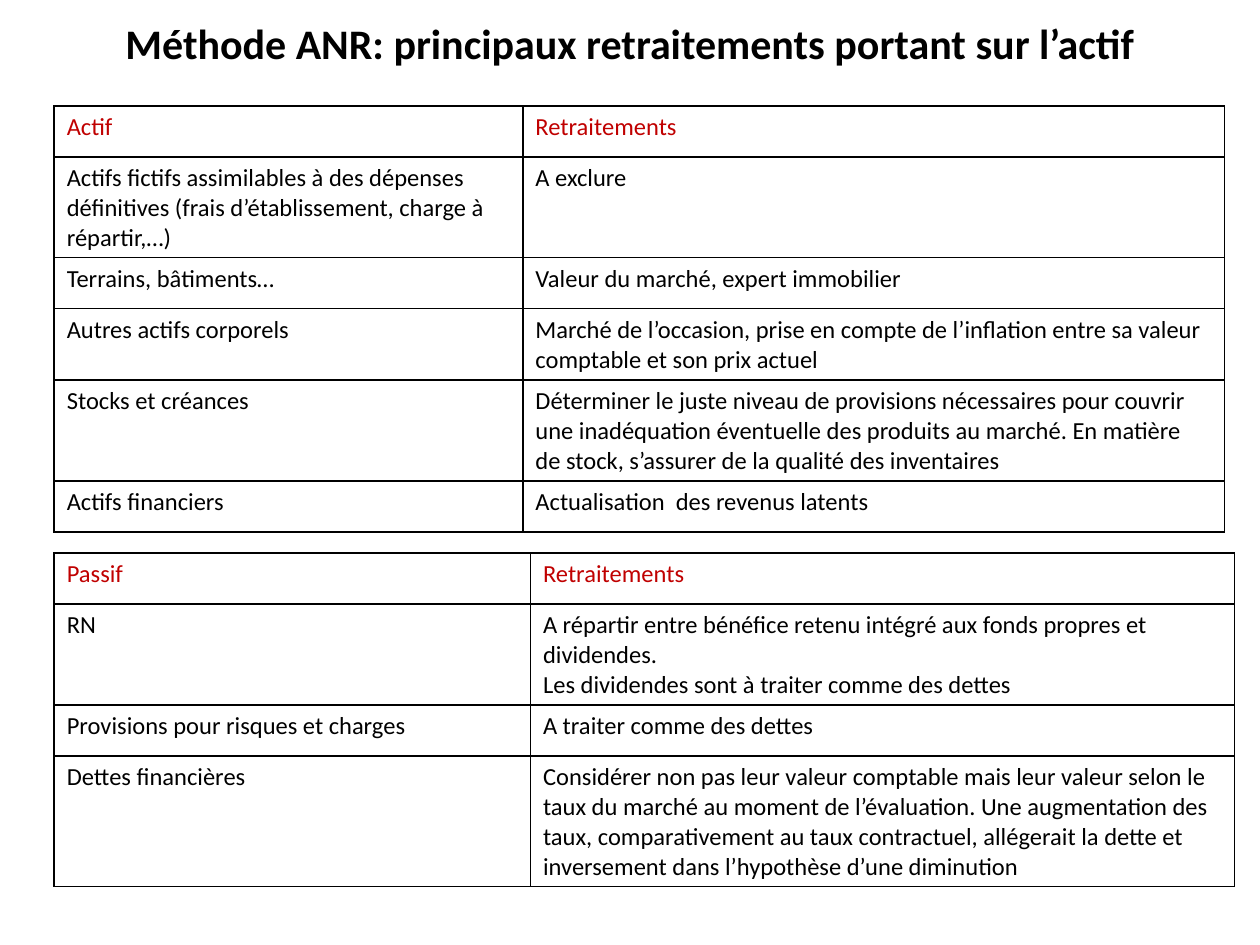
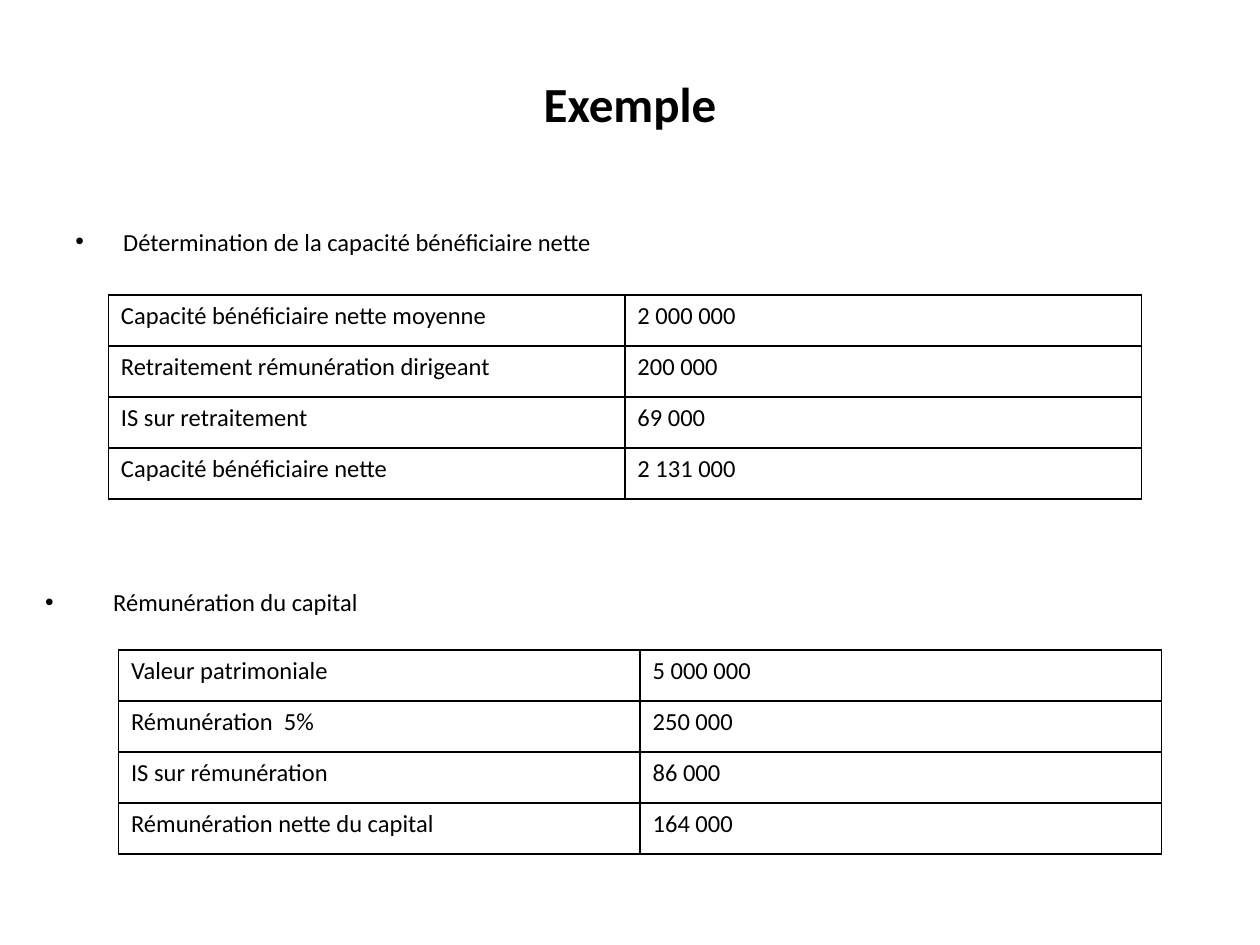
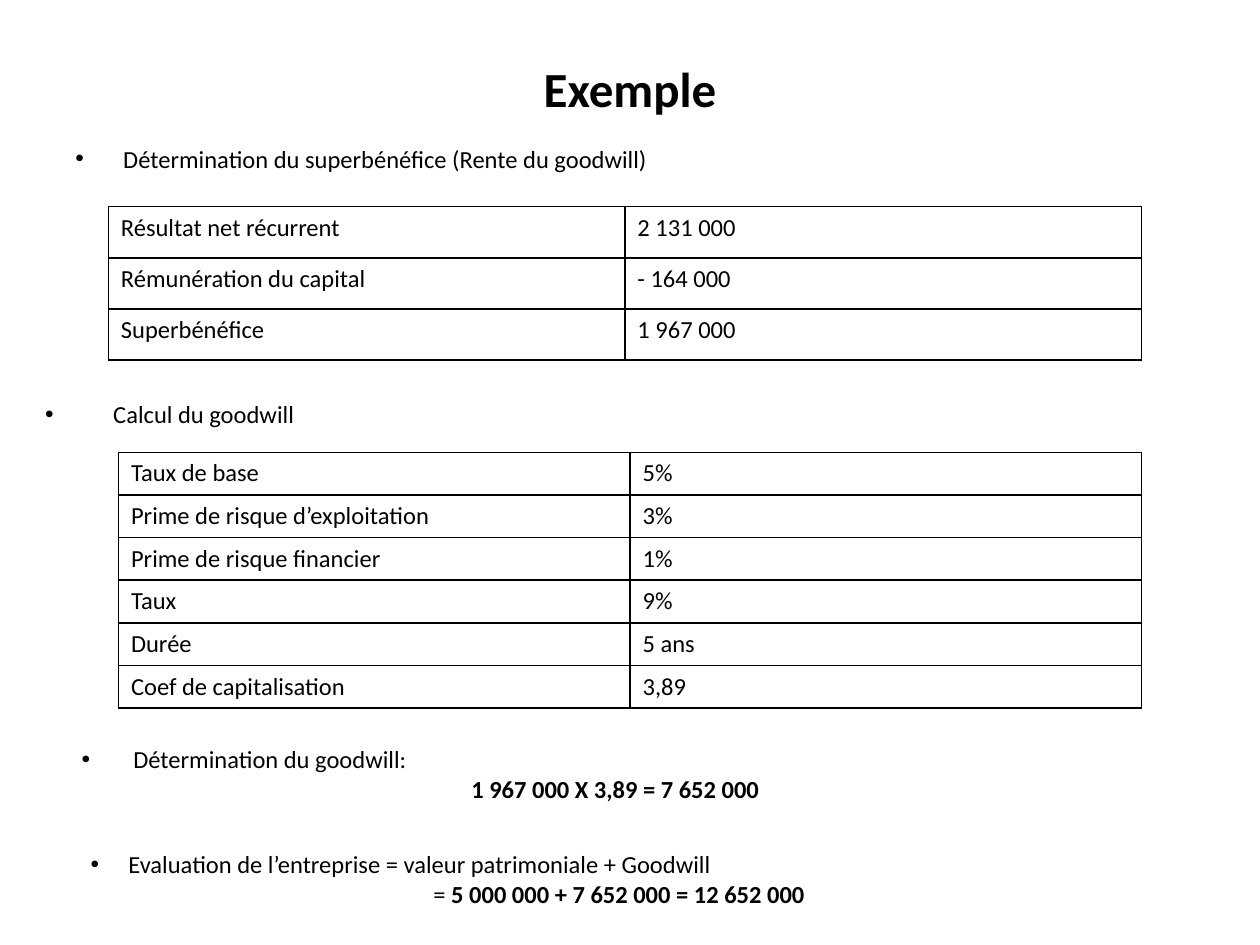
from lxml import etree
from pptx import Presentation
from pptx import util as u
from pptx.dml.color import RGBColor
from pptx.enum import text
from pptx.oxml import parse_xml

COLORS = {"text": "000000", "header": "C00000", "border": "000000"}
BODY = {"name": "Calibri", "size": u.Pt(14), "bold": False}
STRONG = {**BODY, "bold": True}
NS = "http://schemas.openxmlformats.org/drawingml/2006/main"

slides = [
    {
        "title": ("Méthode ANR: principaux retraitements portant sur l’actif", 24, (0.5, 0, 9, 0.68)),
        "bullets": [],
        "tables": [
            (0.43, 0.84, 2.43, (3.72, 5.57), True, [
                ("Actif", "Retraitements"),
                ("Actifs fictifs assimilables à des dépenses définitives "
                 "(frais d’établissement, charge à répartir,…)", "A exclure"),
                ("Terrains, bâtiments…", "Valeur du marché, expert immobilier"),
                ("Autres actifs corporels",
                 "Marché de l’occasion, prise en compte de l’inflation entre sa valeur "
                 "comptable et son prix actuel"),
                ("Stocks et créances",
                 "Déterminer le juste niveau de provisions nécessaires pour couvrir une "
                 "inadéquation éventuelle des produits au marché. En matière de stock, "
                 "s’assurer de la qualité des inventaires"),
                ("Actifs financiers", "Actualisation  des revenus latents"),
            ]),
            (0.43, 4.39, 1.62, (3.78, 5.59), True, [
                ("Passif", "Retraitements"),
                ("RN",
                 "A répartir entre bénéfice retenu intégré aux fonds propres et dividendes.\n"
                 "Les dividendes sont à traiter comme des dettes"),
                ("Provisions pour risques et charges", "A traiter comme des dettes"),
                ("Dettes financières",
                 "Considérer non pas leur valeur comptable mais leur valeur selon le taux du "
                 "marché au moment de l’évaluation. Une augmentation des taux, comparativement "
                 "au taux contractuel, allégerait la dette et inversement dans l’hypothèse "
                 "d’une diminution"),
            ]),
        ],
    },
    {
        "title": ("Exemple", 28, (0.5, 0.3, 9, 1.03)),
        "bullets": [
            ((0.5, 1.75, 9, 4.95), 0.38, 0.38, "Détermination de la capacité bénéficiaire nette", []),
            ((0, 4.61, 9.22, 0.34), 0.8, 0.54, "Rémunération du capital", []),
        ],
        "tables": [
            (0.86, 2.34, 1.62, (4.1, 4.1), False, [
                ("Capacité bénéficiaire nette moyenne", "2 000 000"),
                ("Retraitement rémunération dirigeant", "200 000"),
                ("IS sur retraitement", "69 000"),
                ("Capacité bénéficiaire nette", "2 131 000"),
            ]),
            (0.94, 5.16, 1.62, (4.14, 4.14), False, [
                ("Valeur patrimoniale", "5 000 000"),
                ("Rémunération  5%", "250 000"),
                ("IS sur rémunération", "86 000"),
                ("Rémunération nette du capital", "164 000"),
            ]),
        ],
    },
    {
        "title": ("Exemple", 28, (0.5, 0.3, 9, 0.79)),
        "bullets": [
            ((0.5, 1.09, 9, 5.61), 0.38, 0.38, "Détermination du superbénéfice (Rente du goodwill)", []),
            ((0, 3.12, 9.22, 0.34), 0.8, 0.54, "Calcul du goodwill", []),
            ((0.55, 5.86, 8.67, 0.57), 0.41, 0.41, "Détermination du goodwill:",
             [("1 967 000 X 3,89 = 7 652 000", STRONG)]),
            ((0.62, 6.69, 8.59, 0.57), 0.3, 0.3,
             "Evaluation de l’entreprise = valeur patrimoniale + Goodwill",
             [("= ", BODY), ("5 000 000 + 7 652 000 = 12 652 000", STRONG)]),
        ],
        "tables": [
            (0.86, 1.64, 1.22, (4.1, 4.1), False, [
                ("Résultat net récurrent", "2 131 000"),
                ("Rémunération du capital", "- 164 000"),
                ("Superbénéfice", "1 967 000"),
            ]),
            (0.94, 3.59, 2.03, (4.06, 4.06), False, [
                ("Taux de base", "5%"),
                ("Prime de risque d’exploitation", "3%"),
                ("Prime de risque financier", "1%"),
                ("Taux", "9%"),
                ("Durée", "5 ans"),
                ("Coef de capitalisation", "3,89"),
            ]),
        ],
    },
]


def add_run(p, content, fmt, color="text"):
    r = p.add_run()
    r.text = content
    for key, value in fmt.items():
        setattr(r.font, key, value)
    r.font.color.rgb = RGBColor.from_string(COLORS[color])


def add_box(s, place):
    tf = s.shapes.add_textbox(*map(u.Inches, place)).text_frame
    tf.word_wrap = True
    return tf


prs = Presentation()
prs.slide_width, prs.slide_height = u.Inches(10), u.Inches(7.5)

for content in slides:
    s = prs.slides.add_slide(prs.slide_layouts[6])

    title, size, place = content["title"]
    tf = add_box(s, place)
    tf.vertical_anchor = text.MSO_ANCHOR.MIDDLE
    p = tf.paragraphs[0]
    p.alignment = text.PP_ALIGN.CENTER
    add_run(p, title, {**STRONG, "size": u.Pt(size)})

    for place, margin, hanging, label, formula in content["bullets"]:
        tf = add_box(s, place)
        p = tf.paragraphs[0]
        add_run(p, label, BODY)
        pPr = p._p.get_or_add_pPr()
        pPr.set("marL", str(u.Inches(margin)))
        pPr.set("indent", str(-u.Inches(hanging)))
        etree.SubElement(pPr, f"{{{NS}}}buFont", typeface="Arial")
        etree.SubElement(pPr, f"{{{NS}}}buChar", char="•")
        if formula:
            p = tf.add_paragraph()
            p.alignment = text.PP_ALIGN.CENTER
            for part, fmt in formula:
                add_run(p, part, fmt)

    for left, top, height, widths, has_header, rows in content["tables"]:
        place = map(u.Inches, (left, top, sum(widths), height))
        table = s.shapes.add_table(len(rows), len(widths), *place).table
        table.first_row = table.horz_banding = False
        for column, width in zip(table.columns, widths):
            column.width = u.Inches(width)
        for i, row in enumerate(rows):
            for j, value in enumerate(row):
                cell = table.cell(i, j)
                for k, line in enumerate(value.split("\n")):
                    p = cell.text_frame.add_paragraph() if k else cell.text_frame.paragraphs[0]
                    add_run(p, line, BODY, "header" if has_header and i == 0 else "text")
                tcPr = cell._tc.get_or_add_tcPr()
                for side in "LRTB":
                    tcPr.append(parse_xml(
                        f'<a:ln{side} xmlns:a="{NS}" w="{u.Pt(1)}"><a:solidFill>'
                        f'<a:srgbClr val="{COLORS["border"]}"/></a:solidFill></a:ln{side}>'))
                cell.fill.background()

prs.save("out.pptx")
